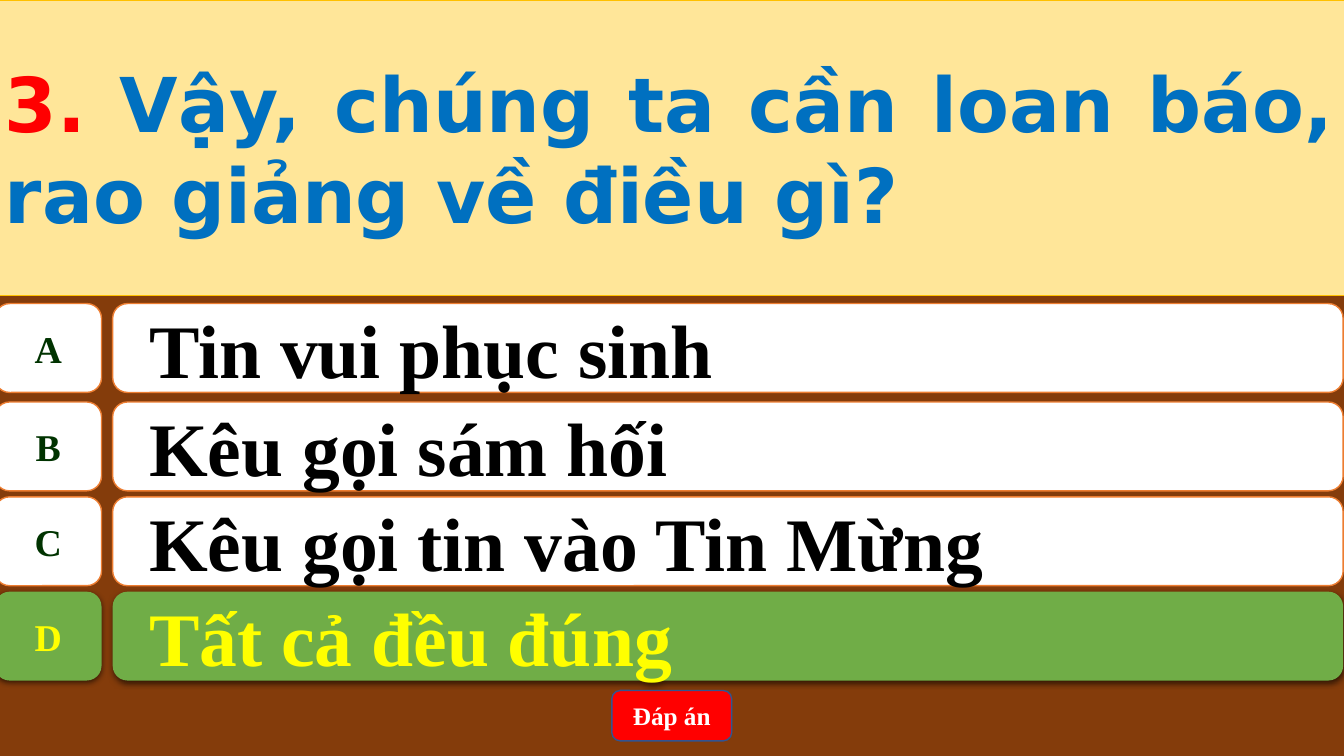
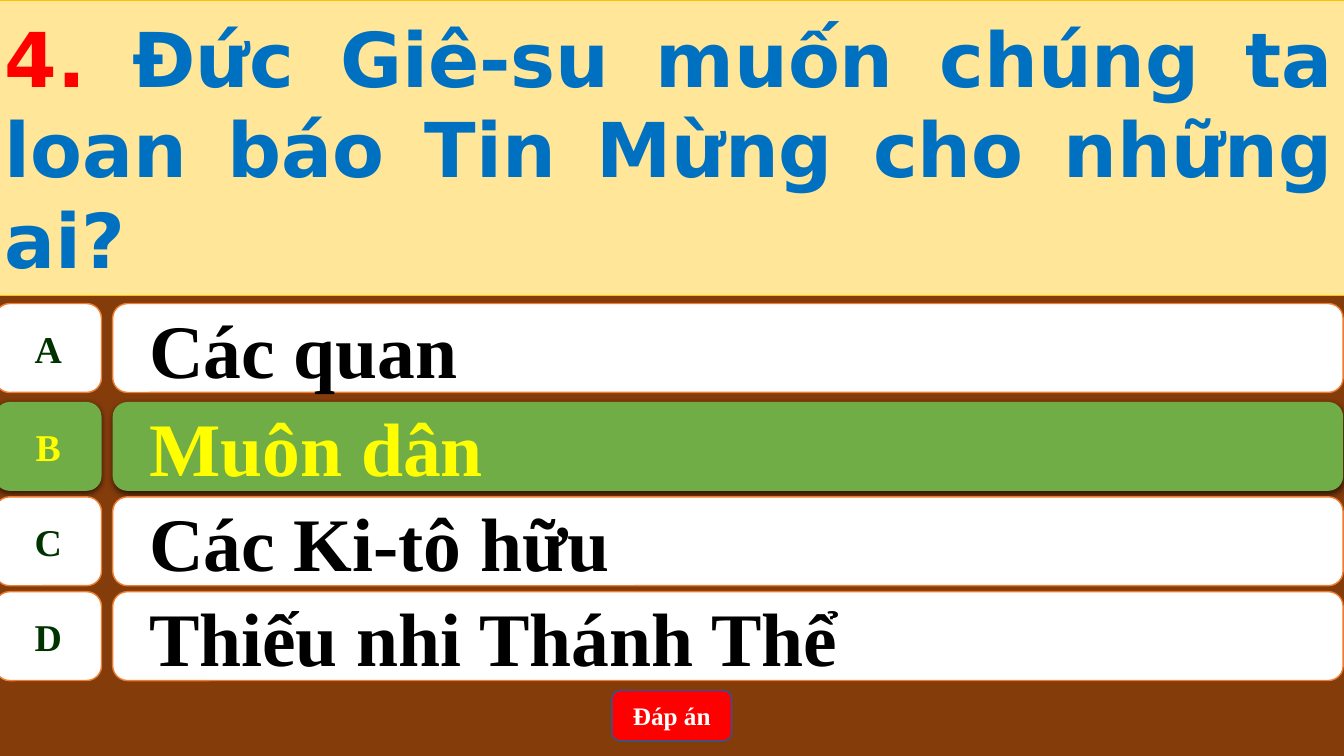
from lxml.etree import SubElement
from pptx import Presentation
from pptx.dml.color import RGBColor
from pptx.enum.shapes import MSO_SHAPE as Shape
from pptx.enum.text import MSO_ANCHOR as Anchor, MSO_AUTO_SIZE as AutoSize, PP_ALIGN as Align
from pptx.oxml.ns import qn
from pptx.util import Cm, Pt

BROWN = RGBColor(0x84, 0x3C, 0x0B)
CREAM = RGBColor(0xFF, 0xE6, 0x99)
GOLD = RGBColor(0xFF, 0xC0, 0x00)
ORANGE = RGBColor(0xED, 0x7D, 0x31)
GREEN = RGBColor(0x70, 0xAD, 0x47)
DARK_GREEN = RGBColor(0x00, 0x33, 0x00)
YELLOW = RGBColor(0xFF, 0xFF, 0x00)
RED = RGBColor(0xFF, 0x00, 0x00)
BLUE = RGBColor(0x00, 0x70, 0xC0)
NAVY = RGBColor(0x32, 0x54, 0x91)
WHITE = RGBColor(0xFF, 0xFF, 0xFF)
BLACK = RGBColor(0x00, 0x00, 0x00)

QUESTION_FONT = "DejaVu Sans"
ANSWER_FONT = "Times New Roman"
LETTERS = "ABCD"
ROW_TOPS = (7.65, 10.13, 12.52, 14.91)
ROW_HEIGHT = 2.24
EDGE = -0.13

QUESTIONS = [
    ("3. ", "Vậy, chúng ta cần loan báo, rao giảng về điều gì?",
     ["Tin vui phục sinh", "Kêu gọi sám hối", "Kêu gọi tin vào Tin Mừng", "Tất cả đều đúng"], "D"),
    ("4. ", "Đức Giê-su muốn chúng ta loan báo Tin Mừng cho những ai?",
     ["Các quan", "Muôn dân", "Các Ki-tô hữu", "Thiếu nhi Thánh Thể"], "B"),
]


class Quiz:
    def __init__(self):
        self.deck = Presentation()
        self.deck.slide_width, self.deck.slide_height = Cm(33.87), Cm(19.05)
        background = self.deck.slide_master.background.fill
        background.solid()
        background.fore_color.rgb = BROWN
        self.page = None

    def add_page(self):
        self.page = self.deck.slides.add_slide(self.deck.slide_layouts[5])

    @staticmethod
    def paint(box, fill, line=None, width=1):
        box.fill.solid()
        box.fill.fore_color.rgb = fill
        if line is None:
            box.line.fill.background()
        else:
            box.line.color.rgb = line
            box.line.width = Pt(width)

    @staticmethod
    def add_span(para, text, size, color, font=ANSWER_FONT):
        span = para.add_run()
        span.text = text
        span.font.name = font
        span.font.size = Pt(size)
        span.font.bold = True
        span.font.color.rgb = color

    @staticmethod
    def add_shadow(box):
        """Give the box a soft shadow that falls straight down."""
        effects = box._element.spPr.find(qn("a:effectLst"))
        shadow = SubElement(effects, qn("a:outerShdw"), blurRad=str(Pt(4.5)),
                            dist=str(Pt(1.5)), dir="5400000", algn="ctr", rotWithShape="0")
        color = SubElement(shadow, qn("a:srgbClr"), val=str(BLACK))
        SubElement(color, qn("a:alpha"), val="63000")

    def add_box(self, shapes, kind, place, text, size, color, fill, line, align=Align.CENTER):
        box = shapes.add_shape(kind, *map(Cm, place))
        box.shadow.inherit = False
        self.paint(box, fill, line)
        frame = box.text_frame
        frame.word_wrap = True
        frame.vertical_anchor = Anchor.MIDDLE
        para = frame.paragraphs[0]
        para.alignment = align
        self.add_span(para, text, size, color)
        return box

    def add_question(self, number, text):
        title = self.page.shapes.title
        title.left, title.top, title.width, title.height = map(Cm, (EDGE, 0, 34.01, 7.44))
        self.paint(title, CREAM, GOLD, 0.5)
        frame = title.text_frame
        frame.word_wrap = True
        frame.auto_size = AutoSize.NONE
        frame.vertical_anchor = Anchor.MIDDLE
        para = frame.paragraphs[0]
        para.alignment = Align.JUSTIFY
        self.add_span(para, number, 54, RED, QUESTION_FONT)
        self.add_span(para, text, 54, BLUE, QUESTION_FONT)

    def add_answer(self, letter, text, top, is_right):
        """Add a lettered answer row, highlighted when it is the right one."""
        row = self.page.shapes.add_group_shape().shapes
        fill, line = (GREEN, None) if is_right else (WHITE, ORANGE)
        bar = self.add_box(row, Shape.ROUNDED_RECTANGLE, (2.84, top, 31.01, ROW_HEIGHT), text, 54,
                           YELLOW if is_right else BLACK, fill, line, Align.LEFT)
        bar.text_frame.margin_left = Cm(0.81)
        badge = self.add_box(row, Shape.FLOWCHART_ALTERNATE_PROCESS, (EDGE, top, 2.69, ROW_HEIGHT),
                             letter, 27, YELLOW if is_right else DARK_GREEN, fill, line)
        badge.text_frame.word_wrap = False
        if is_right:
            self.add_shadow(bar)
            self.add_shadow(badge)

    def add_button(self, text):
        self.add_box(self.page.shapes, Shape.ROUNDED_RECTANGLE, (15.42, 17.4, 3.02, 1.27),
                     text, 18, WHITE, RED, NAVY)


def main():
    quiz = Quiz()
    for number, question, answers, right_letter in QUESTIONS:
        quiz.add_page()
        quiz.add_question(number, question)
        for letter, answer, top in zip(LETTERS, answers, ROW_TOPS):
            quiz.add_answer(letter, answer, top, letter == right_letter)
        quiz.add_button("Đáp án")
    quiz.deck.save("out.pptx")


if __name__ == "__main__":
    main()
